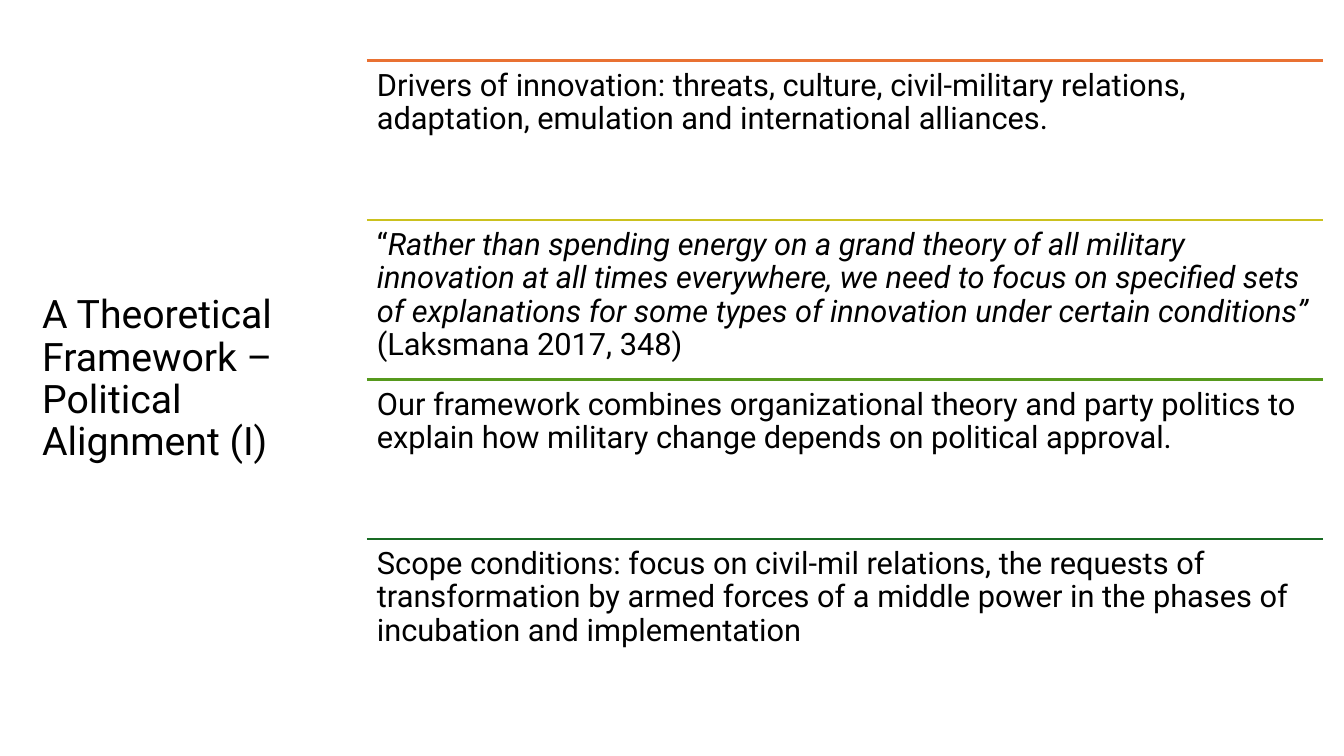
from lxml import etree
from pptx import Presentation
from pptx.dml.color import RGBColor
from pptx.enum.shapes import MSO_CONNECTOR
from pptx.enum.text import MSO_ANCHOR
from pptx.oxml.ns import qn
from pptx.util import Inches, Pt

STRAIGHT = MSO_CONNECTOR.STRAIGHT
TOP, MIDDLE = MSO_ANCHOR.TOP, MSO_ANCHOR.MIDDLE

BLACK = RGBColor(0x00, 0x00, 0x00)
ORANGE = RGBColor(0xE9, 0x71, 0x32)
YELLOW = RGBColor(0xCB, 0xC1, 0x1E)
LIGHT_GREEN = RGBColor(0x56, 0x99, 0x1D)
DARK_GREEN = RGBColor(0x19, 0x6B, 0x24)

CONTENT_TOP, CONTENT_HEIGHT = 0.6, 6.33
ROW_LEFT, ROW_WIDTH = 3.64, 9.48

TITLE = "A Theoretical Framework – Political Alignment (I)"

# Each row: line colour, then (text, italic) runs
ROWS = [
    (ORANGE, [("Drivers of innovation: threats, culture, civil-military relations, "
               "adaptation, emulation and international alliances.", False)]),
    (YELLOW, [("“", False),
              ("Rather than spending energy on a grand theory of all military "
               "innovation at all times everywhere, we need to focus on specified "
               "sets of explanations for some types of innovation under certain "
               "conditions” ", True),
              ("(Laksmana 2017, 348)", False)]),
    (LIGHT_GREEN, [("Our framework combines organizational theory and party politics to "
                    "explain how military change depends on political approval.", False)]),
    (DARK_GREEN, [("Scope conditions: focus on civil-mil relations, the requests of "
                   "transformation by armed forces of a middle power in the phases of "
                   "incubation and implementation", False)]),
]


def add_text(slide, left, top, width, height, runs, size, anchor, inset):
    text_box = slide.shapes.add_textbox(
        Inches(left), Inches(top), Inches(width), Inches(height))
    frame = text_box.text_frame
    frame_format = {
        "word_wrap": True,
        "vertical_anchor": anchor,
        "margin_left": Inches(0.1), "margin_right": Inches(0.1),
        "margin_top": Inches(inset), "margin_bottom": Inches(inset),
    }
    for name, value in frame_format.items():
        setattr(frame, name, value)
    paragraph = frame.paragraphs[0]
    paragraph.line_spacing = 0.9
    for text, italic in runs:
        run = paragraph.add_run()
        run.text = text
        font_format = {"name": "Roboto", "size": Pt(size), "italic": italic}
        for name, value in font_format.items():
            setattr(run.font, name, value)
        run.font.color.rgb = BLACK


def add_rule(slide, left, top, width, color):
    rule = slide.shapes.add_connector(
        STRAIGHT, Inches(left), Inches(top), Inches(left + width), Inches(top))
    rule.line.color.rgb = color
    rule.line.width = Pt(1.5)
    etree.SubElement(rule._element.spPr, qn("a:effectLst"))


def main():
    presentation = Presentation()
    presentation.slide_width = Inches(13.33)
    presentation.slide_height = Inches(7.5)
    slide = presentation.slides.add_slide(presentation.slide_layouts[6])

    # Title on the left
    add_text(slide, 0.32, CONTENT_TOP, 2.83, CONTENT_HEIGHT,
             [(TITLE, False)], 28, MIDDLE, 0.05)

    # Equal rows on the right, each under a coloured rule
    row_height = CONTENT_HEIGHT / len(ROWS)
    for index, (color, runs) in enumerate(ROWS):
        top = CONTENT_TOP + index * row_height
        add_rule(slide, ROW_LEFT, top, ROW_WIDTH, color)
        add_text(slide, ROW_LEFT, top, ROW_WIDTH, row_height, runs, 22, TOP, 0.09)

    presentation.save("out.pptx")


if __name__ == "__main__":
    main()
